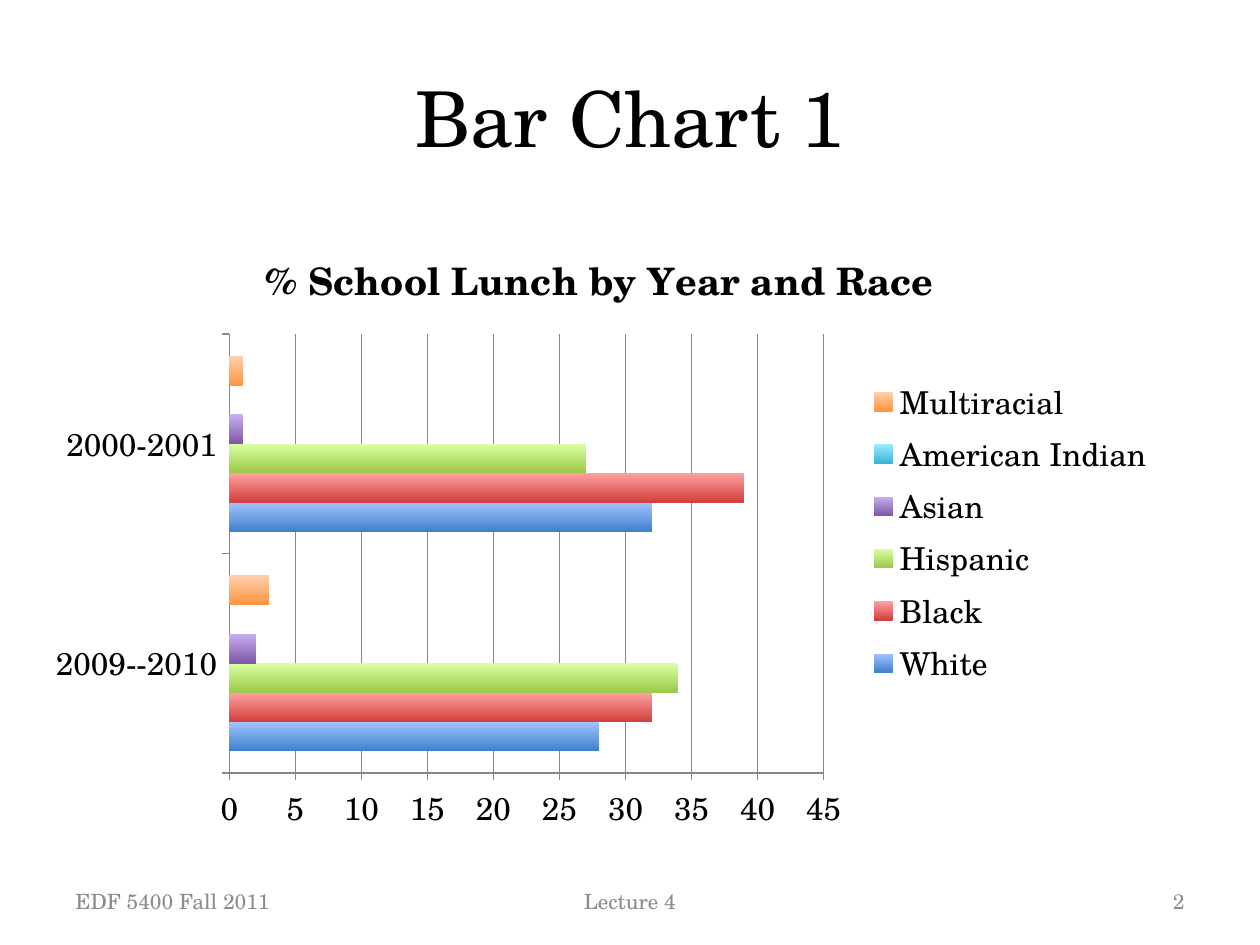
from lxml import etree
from pptx import Presentation
from pptx.chart.data import CategoryChartData
from pptx.dml.color import RGBColor
from pptx.enum import chart as ch, text
from pptx.oxml.ns import qn
from pptx.util import Pt

FONT = "TeX Gyre Schola"
COLORS = {"text": "000000", "footer": "8C8C8C", "axis": "868686"}
# name, values for 2009--2010 and 2000-2001, light and dark gradient ends
SERIES = [
    ("White", (28, 32), "A3C4FF", "3F80CD"),
    ("Black", (32, 39), "FFA2A1", "D1403C"),
    ("Hispanic", (34, 27), "DBFFA3", "9BC94A"),
    ("Asian", (2, 1), "C7AFED", "7F58A8"),
    ("American Indian", (0, 0), "9EEAFF", "38B5D6"),
    ("Multiracial", (3, 1), "FFD0B0", "FF953E"),
]
FOOTERS = [
    ("EDF 5400 Fall 2011", 36, 168, text.PP_ALIGN.LEFT),
    ("Lecture 4", 246, 228, text.PP_ALIGN.CENTER),
    ("2", 516, 168, text.PP_ALIGN.RIGHT),
]


def style(font, size, color, bold=False):
    font.name, font.size, font.bold = FONT, Pt(size), bold
    font.color.rgb = RGBColor.from_string(color)


def write(frame, words, size, color, align):
    frame.word_wrap = True
    frame.vertical_anchor = text.MSO_ANCHOR.MIDDLE
    para = frame.paragraphs[0]
    para.alignment = align
    span = para.add_run()
    span.text = words
    style(span.font, size, color)


deck = Presentation()
deck.slide_width, deck.slide_height = Pt(720), Pt(540)
page = deck.slides.add_slide(deck.slide_layouts[5])

title = page.shapes.title
title.left, title.top, title.width, title.height = Pt(36), Pt(21.6), Pt(648), Pt(90)
write(title.text_frame, "Bar Chart 1", 44, COLORS["text"], text.PP_ALIGN.CENTER)

# Chart
data = CategoryChartData()
data.categories = ["2009--2010", "2000-2001"]
for name, values, light, dark in SERIES:
    data.add_series(name, values)
chart = page.shapes.add_chart(ch.XL_CHART_TYPE.BAR_CLUSTERED, Pt(19), Pt(126),
                              Pt(648), Pt(356.4), data).chart
style(chart.font, 18, COLORS["text"])

chart.has_title = True
span = chart.chart_title.text_frame.paragraphs[0].add_run()
span.text = "% School Lunch by Year and Race"
style(span.font, 21.6, COLORS["text"], bold=True)
chart.chart_title.include_in_layout = False

chart.has_legend = True
chart.legend.position = ch.XL_LEGEND_POSITION.RIGHT
chart.legend.include_in_layout = False

plot = chart.plots[0]
plot.gap_width, plot.overlap, plot.vary_by_categories = 150, 0, False
for series, (name, values, light, dark) in zip(plot.series, SERIES):
    fill = series.format.fill
    fill.gradient()
    fill.gradient_angle = 270
    for stop, color, position in zip(fill.gradient_stops, (light, dark), (0, 1)):
        stop.color.rgb = RGBColor.from_string(color)
        stop.position = position

value_axis = chart.value_axis
value_axis.minimum_scale, value_axis.maximum_scale, value_axis.major_unit = 0, 45, 5
value_axis.has_major_gridlines = True
value_axis.tick_labels.number_format = "General"
value_axis.tick_labels.number_format_is_linked = False
for axis in (chart.category_axis, value_axis):
    axis.major_tick_mark = ch.XL_TICK_MARK.OUTSIDE
    axis.minor_tick_mark = ch.XL_TICK_MARK.NONE
for lined in (chart.category_axis, value_axis, value_axis.major_gridlines):
    lined.format.line.width = Pt(0.7)
    lined.format.line.color.rgb = RGBColor.from_string(COLORS["axis"])

# Fixed inner plot area, as fractions of the chart
plot_area = plot._element.getparent()
for old in plot_area.findall(qn("c:layout")):
    plot_area.remove(old)
layout = etree.Element(qn("c:layout"))
manual = etree.SubElement(layout, qn("c:manualLayout"))
for tag, value in [("layoutTarget", "inner"), ("xMode", "edge"), ("yMode", "edge"),
                   ("x", "0.173"), ("y", "0.182"), ("w", "0.524"), ("h", "0.704")]:
    etree.SubElement(manual, qn("c:" + tag)).set("val", value)
plot_area.insert(0, layout)

# Footer
for words, left, width, align in FOOTERS:
    box = page.shapes.add_textbox(Pt(left), Pt(500.5), Pt(width), Pt(28.75))
    write(box.text_frame, words, 12, COLORS["footer"], align)

deck.save("out.pptx")
